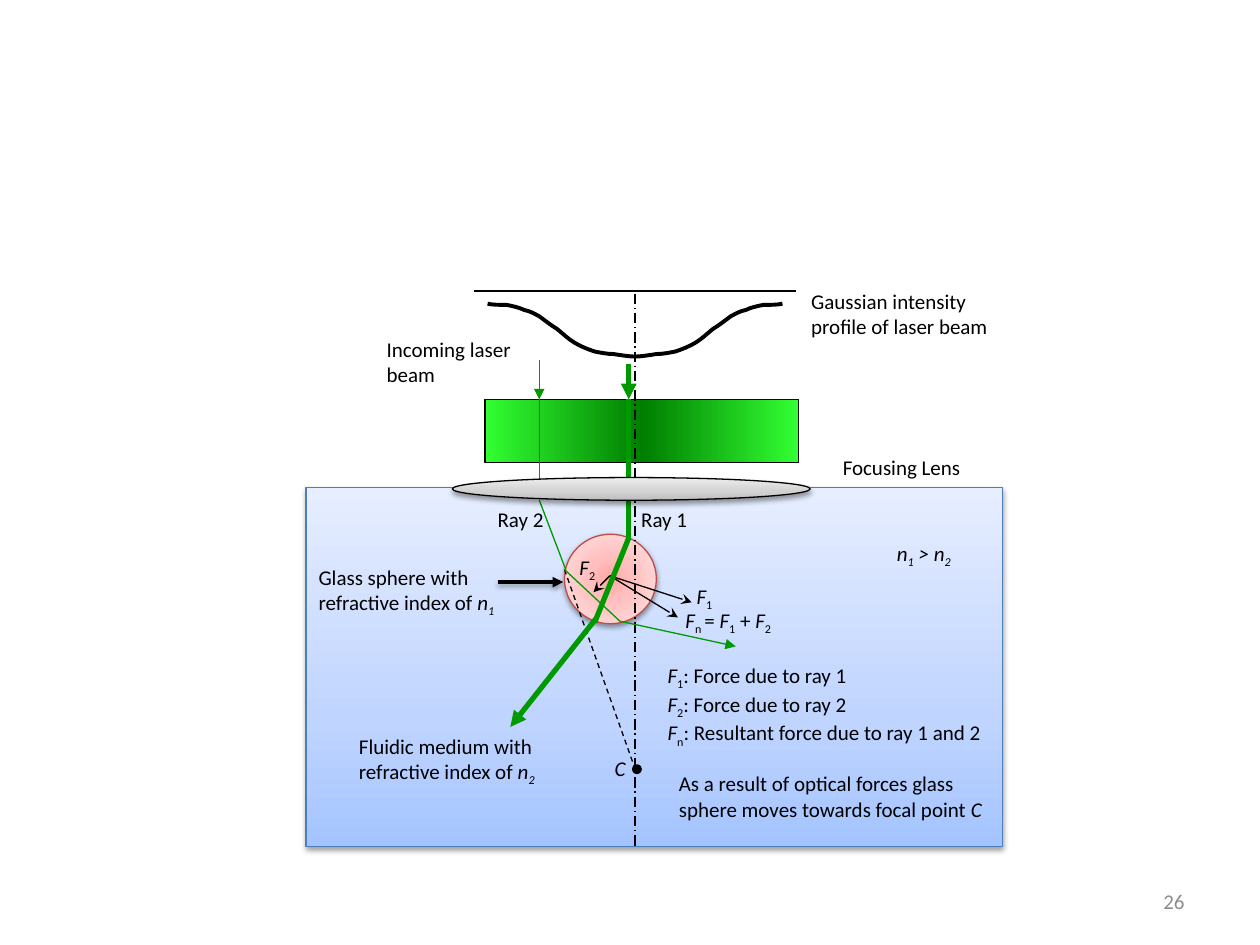
from lxml import etree
from pptx import Presentation
from pptx.dml.color import RGBColor as RGB
from pptx.enum.dml import MSO_LINE as Dash
from pptx.enum.shapes import MSO_CONNECTOR as Conn, MSO_SHAPE as Kind
from pptx.enum.text import MSO_ANCHOR as Anchor, MSO_AUTO_SIZE as Auto, PP_ALIGN as Align
from pptx.oxml.ns import qn
from pptx.util import Inches, Pt

COLS, ROWS = 100, 75
WIDE, HIGH = Inches(10), Inches(7.5)

BLACK = RGB(0x00, 0x00, 0x00)
GREY = RGB(0x8C, 0x8C, 0x8C)
GREEN = RGB(0x00, 0x99, 0x00)
BLUE = RGB(0x4B, 0x7E, 0xBC)
RED = RGB(0xBF, 0x4C, 0x48)
LIME, DEEP = RGB(0x33, 0xFF, 0x33), RGB(0x00, 0x7E, 0x00)
WATER = [(0, RGB(0xA4, 0xC4, 0xFF)), (35, RGB(0xBF, 0xD4, 0xFF)), (100, RGB(0xE6, 0xEE, 0xFF))]
GLASS = [(0, RGB(0xFF, 0xA6, 0xA5)), (35, RGB(0xFF, 0xC0, 0xBF)), (100, RGB(0xFF, 0xE7, 0xE7))]
STEEL = [(0, RGB(0xBD, 0xBD, 0xBD)), (35, RGB(0xD1, 0xD1, 0xD1)), (100, RGB(0xEE, 0xEE, 0xEE))]
BEAM = [(0, LIME), (50, DEEP), (100, LIME)]

THIN, MID, CURVE, THICK = 0.75, 2, 2.25, 3
AXIS = 50.4
FOCUS = (50.5, 61.3)
HEART = (48.4, 45.7)
RAY1, RAY2 = 49.9, 42.8

# Start point, then two handles and an end point for each arc
BELL = [(38.7, 24.1),
        (39, 24.2), (39.7, 24.2), (40.2, 24.2),
        (40.7, 24.3), (41.2, 24.4), (41.6, 24.6),
        (42.1, 24.7), (42.4, 24.9), (42.8, 25.1),
        (43.2, 25.4), (43.7, 25.8), (44.2, 26.1),
        (44.7, 26.5), (45.1, 26.9), (45.6, 27.2),
        (46.1, 27.5), (46.6, 27.7), (47.2, 27.9),
        (47.7, 28), (48.2, 28.1), (48.7, 28.1),
        (49.3, 28.2), (50, 28.3), (50.4, 28.3)]


def sub(node, tag, **attrs):
    return etree.SubElement(node, qn("a:" + tag), {k: str(v) for k, v in attrs.items()})


class Board:
    """Draws on one slide; lengths are columns and rows of a 100 by 75 grid."""

    def __init__(self, slide):
        self.slide = slide
        self.shapes = slide.shapes
        self.font = {"name": "Calibri", "size": Pt(12)}

    def spot(self, x, y):
        return round(x * WIDE / COLS), round(y * HIGH / ROWS)

    def box(self, x, y, w, h):
        return *self.spot(x, y), *self.spot(w, h)

    def pen(self, item, color, width):
        item.line.color.rgb = color
        item.line.width = Pt(width)

    def shade(self, effect):
        cast = sub(effect, "outerShdw", blurRad=39400, dist=20300, dir=5400000, rotWithShape=0)
        sub(sub(cast, "srgbClr", val="000000"), "alpha", val=38000)

    def blend(self, item, stops, angle):
        """Fill with a gradient; no angle means from the centre out."""
        item.fill.gradient()
        grad = item._element.spPr.find(qn("a:gradFill"))
        for child in list(grad):
            grad.remove(child)
        row = sub(grad, "gsLst")
        for share, color in stops:
            sub(sub(row, "gs", pos=share * 1000), "srgbClr", val=color)
        if angle is None:
            ring = sub(grad, "path", path="circle")
            sub(ring, "fillToRect", l=50000, t=50000, r=50000, b=50000)
        else:
            sub(grad, "lin", ang=angle * 60000, scaled=0)

    def form(self, kind, place, fill, color=BLACK, width=THIN, angle=270, shadow=False):
        item = self.shapes.add_shape(kind, *self.box(*place))
        if isinstance(fill, list):
            self.blend(item, fill, angle)
        else:
            item.fill.solid()
            item.fill.fore_color.rgb = fill
        self.pen(item, color, width)
        item.shadow.inherit = False
        if shadow:
            self.shade(item._element.spPr.find(qn("a:effectLst")))

    def line(self, start, end, color=BLACK, width=THIN, dash=None, head=None, shadow=False):
        item = self.shapes.add_connector(Conn.STRAIGHT, *self.spot(*start), *self.spot(*end))
        self.pen(item, color, width)
        if dash:
            item.line.dash_style = dash
        if head:
            sub(item.line._get_or_add_ln(), "tailEnd", type=head)
        effect = sub(item._element.spPr, "effectLst")
        if shadow:
            self.shade(effect)

    def curve(self, points):
        spots = [self.spot(*p) for p in points]
        pen = self.shapes.build_freeform(*spots[0])
        pen.add_line_segments(spots[1:], close=False)
        item = pen.convert_to_shape()
        item.fill.background()
        self.pen(item, BLACK, CURVE)
        item.shadow.inherit = False
        legs = list(item._element.iter(qn("a:lnTo")))
        for i in range(0, len(legs), 3):
            arc = etree.Element(qn("a:cubicBezTo"))
            legs[i].addprevious(arc)
            for leg in legs[i:i + 3]:
                arc.append(leg[0])
                leg.getparent().remove(leg)

    def text(self, place, *paras, color=BLACK, align=Align.LEFT, anchor=Anchor.TOP, wrap=True):
        """Parts split at |; a leading / means italic, a leading _ subscript."""
        frame = self.shapes.add_textbox(*self.box(*place)).text_frame
        look = {"word_wrap": wrap, "vertical_anchor": anchor,
                "auto_size": Auto.NONE if wrap else Auto.SHAPE_TO_FIT_TEXT}
        for key, val in look.items():
            setattr(frame, key, val)
        for i, para in enumerate(paras):
            p = frame.add_paragraph() if i else frame.paragraphs[0]
            p.alignment = align
            for part in para.split("|"):
                words = part.lstrip("/_")
                marks = part[:len(part) - len(words)]
                run = p.add_run()
                run.text = words
                for key, val in {**self.font, "italic": "/" in marks}.items():
                    setattr(run.font, key, val)
                run.font.color.rgb = color
                if "_" in marks:
                    run._r.get_or_add_rPr().set("baseline", "-25000")


def draw(b):
    b.text((71.7, 69.5, 23.3, 4), "26", color=GREY, align=Align.RIGHT, anchor=Anchor.MIDDLE)
    b.form(Kind.RECTANGLE, (24.3, 38.7, 55.3, 28.5), WATER, BLUE, shadow=True)
    b.form(Kind.OVAL, (44.8, 42.4, 7.3, 7.1), GLASS, RED, angle=None, shadow=True)
    b.form(Kind.RECTANGLE, (38.5, 31.7, 24.9, 5), BEAM, angle=0)

    b.curve(BELL)
    b.curve([(2 * AXIS - x, y) for x, y in BELL])
    b.line((37.6, 23.1), (63.2, 23.1))
    b.line((AXIS, 23.3), (AXIS, 67.2), dash=Dash.LONG_DASH_DOT)
    b.line((44.8, 45.2), FOCUS, dash=Dash.DASH)
    for tip in [(47.1, 47), (54.9, 47.8), (53.8, 49)]:
        b.line(HEART, tip, head="stealth")

    rays = [
        (THIN, [(RAY2, 31.7), (RAY2, 38.1)], None),
        (THIN, [(RAY2, 39.7), (44.9, 45.2)], None),
        (THIN, [(49.2, 49.3), (58.4, 51.3)], "triangle"),
        (THICK, [(RAY1, 31.7), (RAY1, 37.9)], None),
        (THICK, [(RAY1, 39.7), (RAY1, 42.8)], None),
        (THICK, [(47.3, 49.1), (40.5, 57.7)], "triangle"),
        (THIN, [(44.8, 45.2), (49.2, 49.3)], None),
        (THICK, [(RAY1, 42.7), (47.2, 49.4)], None),
        (THIN, [(RAY2, 28.6), (RAY2, 31.7)], "triangle"),
        (THICK, [(RAY1, 28.9), (RAY1, 31.7)], "triangle"),
    ]
    for width, ends, head in rays:
        b.line(*ends, GREEN, width, head=head)

    b.form(Kind.OVAL, (35.9, 37.9, 28.4, 1.8), STEEL, shadow=True)
    b.form(Kind.OVAL, (50.3, 60.8, 0.5, 0.5), BLACK, width=MID)

    b.text((52.9, 60.7, 26.7, 6.3),
           "As a result of optical forces glass sphere moves towards focal point |/C")
    b.text((29.7, 26.2, 14.2, 5.2), "Incoming laser beam")
    b.text((47.8, 59.5, 3, 3.1), "/C", wrap=False)
    b.text((63.4, 22.4, 16.3, 7), "Gaussian intensity profile of laser beam")
    b.text((24.3, 44.3, 17.4, 5.7), "Glass sphere with refractive index of |/n|/_1")
    b.text((27.5, 57.7, 20.9, 5.7), "Fluidic medium with refractive index of |/n|/_2")
    b.text((65.9, 35.6, 11.8, 3.1), "Focusing Lens")
    b.text((52, 52.1, 27.6, 8.7), "/F|_1|: Force due to ray 1", "/F|_2|: Force due to ray 2",
           "/F|_n|: Resultant force due to ray 1 and 2")
    b.text((49.9, 39.7, 5.8, 3.1), "Ray 1", wrap=False)
    b.text((38.5, 39.7, 7.9, 3.1), "Ray 2")
    b.text((70.2, 42.4, 7.5, 3), "/n|/_1|/ > n|/_2")
    b.text((54.3, 45.8, 3.4, 3.7), "/F|_1", wrap=False)
    b.text((52.9, 47.7, 9.8, 3.7), "/F|_n |= |/F|_1| + |/F|_2", align=Align.CENTER)
    b.text((45, 43.5, 3.4, 3.7), "/F|_2", wrap=False)
    b.line((39.5, 46.2), (44.7, 46.2), width=MID, head="triangle", shadow=True)


def main():
    deck = Presentation()
    deck.slide_width, deck.slide_height = WIDE, HIGH
    draw(Board(deck.slides.add_slide(deck.slide_layouts[6])))
    deck.save("out.pptx")


if __name__ == "__main__":
    main()
